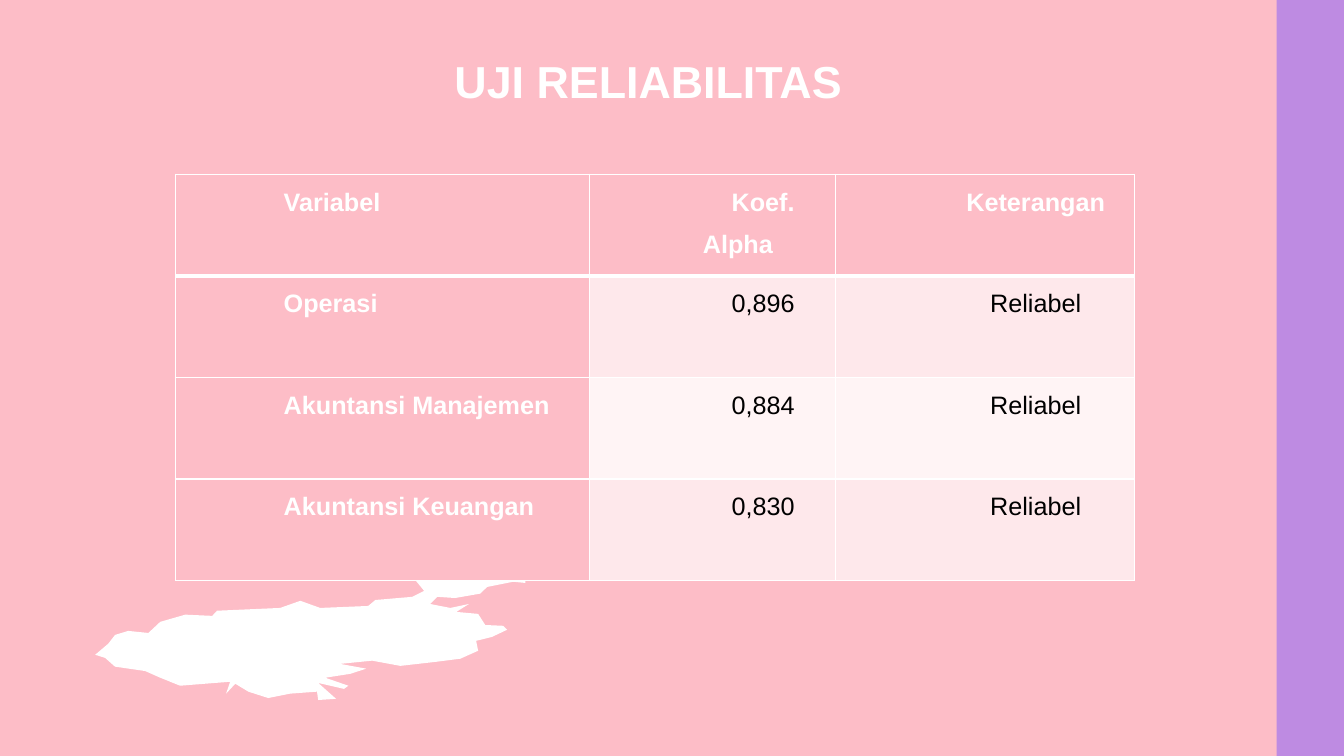
from lxml.etree import SubElement
from pptx import Presentation
from pptx.dml.color import RGBColor
from pptx.enum.shapes import MSO_SHAPE
from pptx.enum.text import PP_ALIGN
from pptx.oxml.ns import qn
from pptx.util import Cm, Pt

PINK, PALE, PALER = "FDBDC7", "FEE8EB", "FFF4F5"
PURPLE, WHITE, BLACK = "BE8BE2", "FFFFFF", "000000"

ROWS = [
    ("Variabel", "Koef. Alpha", "Keterangan"),
    ("Operasi", "0,896", "Reliabel"),
    ("Akuntansi Manajemen", "0,884", "Reliabel"),
    ("Akuntansi Keuangan", "0,830", "Reliabel"),
]
COLUMN_WIDTHS = (10.44, 6.2, 7.54)

ISLAND = [
    (0, 2.14), (0.33, 1.86), (0.5, 1.64), (0.83, 1.54), (1.34, 1.59),
    (1.64, 1.31), (2.27, 1.13), (2.95, 1.16), (3.07, 1.03), (4.66, 0.96),
    (5.17, 0.78), (5.67, 0.96), (6.88, 0.91), (7.06, 0.76), (7.99, 0.68),
    (8.29, 0.53), (8.06, 0.25), (8.06, 0), (10.84, 0), (10.84, 0.33),
    (10.53, 0.3), (10.13, 0.38), (9.88, 0.43), (9.7, 0.6), (9.07, 0.71),
    (8.62, 0.68), (8.44, 0.86), (8.95, 0.96), (9.42, 0.86), (9.1, 1.06),
    (9.65, 1.11), (9.83, 1.39), (10.28, 1.41), (10.38, 1.51), (10, 1.69),
    (9.6, 1.79), (9.65, 2.04), (9.2, 2.24), (8.57, 2.32), (7.69, 2.42),
    (6.98, 2.29), (6.17, 2.37), (6.83, 2.49), (6.43, 2.62), (5.8, 2.72),
    (6.38, 2.92), (6.27, 3), (5.62, 2.85), (6.07, 3.25), (5.62, 3.28),
    (5.59, 3.07), (4.91, 3.12), (4.36, 3.23), (3.86, 3.07), (3.53, 2.87),
    (3.3, 3.12), (3.4, 2.82), (2.14, 2.92), (1.64, 2.72), (1.26, 2.55),
    (0.5, 2.44), (0.25, 2.22),
]


def paint(target, color):
    """Give a fill or a font a solid colour."""
    if hasattr(target, "solid"):
        target.solid()
        target.fore_color.rgb = RGBColor.from_string(color)
    else:
        target.color.rgb = RGBColor.from_string(color)


def set_font(paragraph, size, color, bold):
    """Set the font of a whole paragraph."""
    font = paragraph.font
    font.name, font.size, font.bold = "Arial", Pt(size), bold
    paint(font, color)


def finish(shape, color):
    """Make a shape flat, without outline or shadow."""
    shape.shadow.inherit = False
    shape.line.fill.background()
    paint(shape.fill, color)


def add_island(slide, left, top):
    """Draw the ragged white island from its top left corner."""
    points = [(Cm(left + x), Cm(top + y)) for x, y in ISLAND]
    builder = slide.shapes.build_freeform(*points[0])
    builder.add_line_segments(points[1:], close=True)
    finish(builder.convert_to_shape(), WHITE)


def add_title(slide, left, top, width, height):
    """Place the centred title."""
    box = slide.shapes.add_textbox(Cm(left), Cm(top), Cm(width), Cm(height))
    frame = box.text_frame
    frame.word_wrap = True
    frame.margin_left, frame.margin_right = Cm(0.13), Cm(0.08)
    frame.margin_top = frame.margin_bottom = 0
    paragraph = frame.paragraphs[0]
    paragraph.text = "UJI RELIABILITAS"
    paragraph.alignment = PP_ALIGN.CENTER
    set_font(paragraph, 32, WHITE, True)


def add_sidebar(slide, left, top, width, height):
    """Draw the purple band on the right edge."""
    band = slide.shapes.add_shape(
        MSO_SHAPE.RECTANGLE, Cm(left), Cm(top), Cm(width), Cm(height))
    finish(band, PURPLE)


def set_borders(cell, widths):
    """Give a cell white borders, from a mapping of edge to points."""
    properties = cell._tc.get_or_add_tcPr()
    for index, (edge, width) in enumerate(widths.items()):
        line = SubElement(properties, qn(f"a:{edge}"), w=str(Pt(width)))
        fill = SubElement(line, qn("a:solidFill"))
        SubElement(fill, qn("a:srgbClr"), val=WHITE)
        properties.insert(index, line)


def fill_cell(cell, text, row, column):
    """Write and style one cell according to its place in the table."""
    heading = row == 0 or column == 0
    cell.margin_left = cell.margin_right = Cm(0.19)
    cell.margin_top = cell.margin_bottom = 0
    paint(cell.fill, PINK if heading else PALE if row % 2 else PALER)
    paragraph = cell.text_frame.paragraphs[0]
    paragraph.text = text
    paragraph.alignment = PP_ALIGN.CENTER if column else PP_ALIGN.JUSTIFY
    paragraph.line_spacing = 1.5
    properties = paragraph._p.get_or_add_pPr()
    properties.set("marL", str(Cm(1.27)))
    properties.set("indent", str(Cm(1.27)))
    set_font(paragraph, 18, WHITE if heading else BLACK, heading)
    set_borders(cell, {"lnL": 1, "lnR": 1, "lnT": 3 if row == 1 else 1,
                       "lnB": 3 if row == 0 else 1})


def add_reliability_table(slide, left, top, height):
    """Place the table of reliability coefficients."""
    table = slide.shapes.add_table(
        len(ROWS), len(COLUMN_WIDTHS), Cm(left), Cm(top),
        Cm(sum(COLUMN_WIDTHS)), Cm(height)).table
    for column, width in zip(table.columns, COLUMN_WIDTHS):
        column.width = Cm(width)
    for row, texts in enumerate(ROWS):
        for column, text in enumerate(texts):
            fill_cell(table.cell(row, column), text, row, column)


def main():
    """Build the slide and save it."""
    presentation = Presentation()
    presentation.slide_width, presentation.slide_height = Cm(33.87), Cm(19.05)
    slide = presentation.slides.add_slide(presentation.slide_layouts[6])
    paint(slide.background.fill, PINK)
    add_island(slide, 2.4, 14.36)
    add_title(slide, 1.9, 1.35, 28.83, 1.47)
    add_sidebar(slide, 32.17, 0, 1.7, 19.05)
    add_reliability_table(slide, 4.42, 4.39, 10.24)
    presentation.save("out.pptx")


if __name__ == "__main__":
    main()
